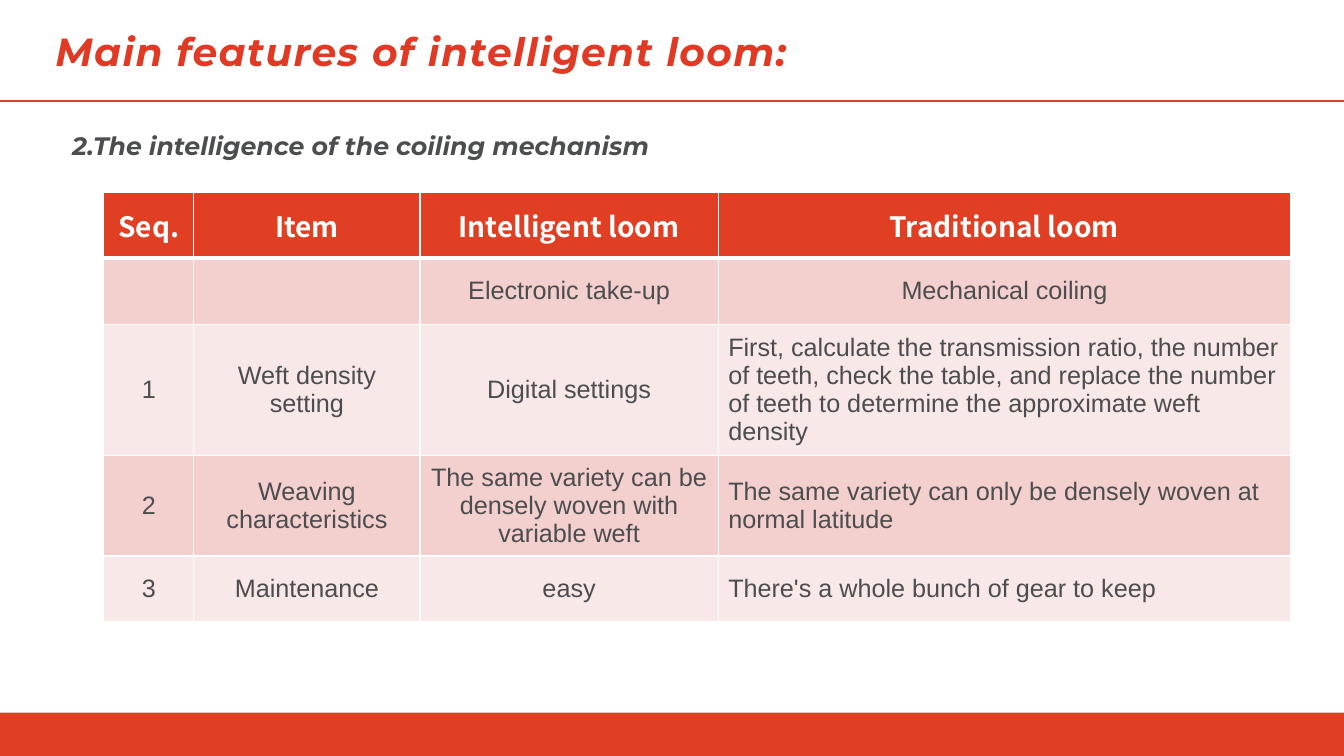
from lxml.etree import SubElement as Sub
from pptx import Presentation
from pptx.dml.color import RGBColor as Rgb
from pptx.enum.shapes import MSO_CONNECTOR as Conn, MSO_SHAPE as Shape
from pptx.enum.text import MSO_ANCHOR as Anchor, MSO_AUTO_SIZE as Auto, PP_ALIGN as Align
from pptx.oxml.ns import qn
from pptx.util import Pt

COLORS = {
    "red": "E03F24", "title": "E03A24", "ink": "4B4D4F", "white": "FFFFFF",
    "dark": "F3CFCD", "light": "F9E8E8",
}
WIDE, HIGH = 960, 540
COLS = [64.5, 161.5, 213, 409]
ROWS = [47, 47, 88, 68, 47]
CELLS = [
    ["Seq.", "Item", "Intelligent loom", "Traditional loom"],
    ["", "", "Electronic take-up", "Mechanical coiling"],
    ["1", "Weft density setting", "Digital settings",
     "First, calculate the transmission ratio, the number of teeth, check the table, "
     "and replace the number of teeth to determine the approximate weft density"],
    ["2", "Weaving characteristics",
     "The same variety can be densely woven with variable weft",
     "The same variety can only be densely woven at normal latitude"],
    ["3", "Maintenance", "easy", "There's a whole bunch of gear to keep"],
]


def color(name):
    return Rgb.from_string(COLORS[name])


def style(para, face, size, tint, bold=False, slant=False):
    font = para.font
    font.name, font.size = face, Pt(size)
    font.bold, font.italic = bold, slant
    font.color.rgb = color(tint)


def add_text(slide, box, text, size, tint):
    frame = slide.shapes.add_textbox(*map(Pt, box)).text_frame
    frame.word_wrap = True
    para = frame.paragraphs[0]
    para.text = text
    style(para, "Montserrat", size, tint, True, True)
    return frame


def add_frame(slide, wide, high):
    # Footer band
    band = slide.shapes.add_shape(Shape.RECTANGLE, 0, Pt(high - 31), Pt(wide), Pt(31))
    band.shadow.inherit = False
    band.fill.solid()
    band.fill.fore_color.rgb = color("red")
    band.line.fill.background()
    # Rule below the title
    rule = slide.shapes.add_connector(Conn.STRAIGHT, 0, Pt(72), Pt(wide), Pt(72))
    rule.line.color.rgb = color("red")
    rule.line.width = Pt(1.5)
    Sub(rule._element.spPr, qn("a:effectLst"))


def add_heads(slide, left, top):
    # Title
    para = add_text(slide, (left, top, 862.5, 62.5),
                    "Main features of intelligent loom:", 28, "title").paragraphs[0]
    para.line_spacing = 0.9
    para.runs[0]._r.get_or_add_rPr().set("spc", "100")
    # Subtitle
    frame = add_text(slide, (left + 12, top + 70, 448.5, 29),
                     "2.The intelligence of the coiling mechanism", 18, "ink")
    frame.word_wrap = False
    frame.auto_size = Auto.SHAPE_TO_FIT_TEXT


def add_edges(cell, widths):
    props = cell._tc.get_or_add_tcPr()
    for side, width in widths.items():
        line = Sub(props, qn(f"a:ln{side}"), w=str(Pt(width)))
        Sub(Sub(line, qn("a:solidFill")), qn("a:srgbClr"), val=COLORS["white"])


def add_grid(slide, left, top):
    table = slide.shapes.add_table(len(ROWS), len(COLS), Pt(left), Pt(top),
                                   Pt(sum(COLS)), Pt(sum(ROWS))).table
    for col, wide in zip(table.columns, COLS):
        col.width = Pt(wide)
    for i, (row, high) in enumerate(zip(table.rows, ROWS)):
        row.height = Pt(high)
        for j, cell in enumerate(row.cells):
            add_edges(cell, {"L": 1, "R": 1, "T": 3 if i == 1 else 1,
                             "B": 3 if i == 0 else 1})
            cell.fill.solid()
            shade = "red" if i == 0 else "dark" if i % 2 else "light"
            cell.fill.fore_color.rgb = color(shade)
            cell.vertical_anchor = Anchor.MIDDLE
            cell.text = CELLS[i][j]
            para = cell.text_frame.paragraphs[0]
            # Long notes in the last column stay left
            para.alignment = Align.LEFT if i > 1 and j == 3 else Align.CENTER
            if i == 0:
                style(para, "Noto Sans CJK SC", 20, "white", bold=True)
            else:
                style(para, "Arial", 18, "ink")


def main():
    deck = Presentation()
    deck.slide_width, deck.slide_height = Pt(WIDE), Pt(HIGH)
    slide = deck.slides.add_slide(deck.slide_layouts[6])
    add_frame(slide, WIDE, HIGH)
    add_heads(slide, 32.5, 19.5)
    add_grid(slide, 74, 137.5)
    deck.save("out.pptx")


if __name__ == "__main__":
    main()
